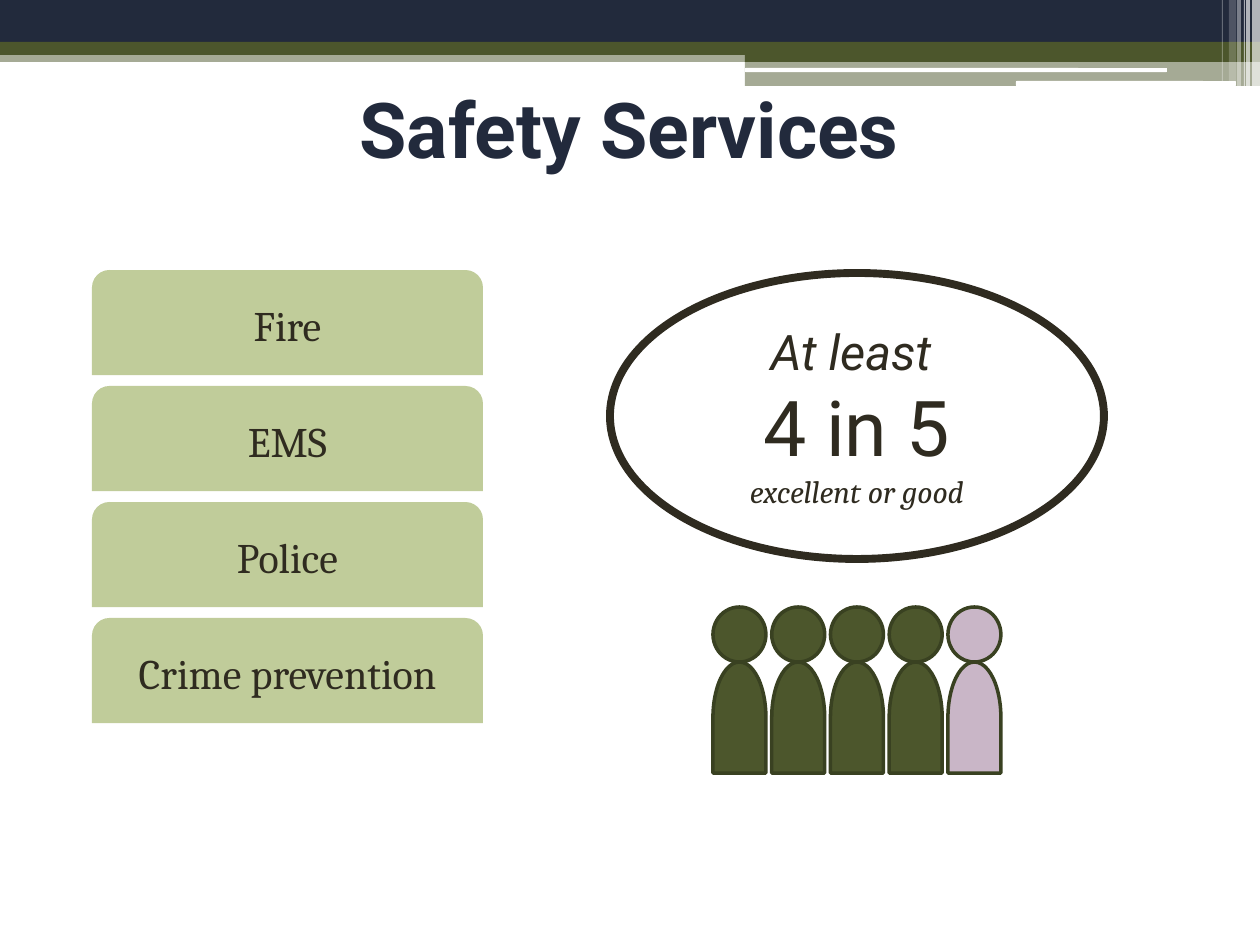
from lxml import etree
from pptx import Presentation
from pptx.dml.color import RGBColor
from pptx.enum.shapes import MSO_SHAPE
from pptx.enum.text import MSO_ANCHOR, PP_ALIGN
from pptx.oxml.ns import qn
from pptx.util import Pt

NAVY = RGBColor(0x22, 0x2A, 0x3C)
OLIVE = RGBColor(0x4C, 0x56, 0x2C)
OLIVE_EDGE = RGBColor(0x39, 0x41, 0x21)
SAGE = RGBColor(0xC0, 0xCC, 0x9A)
LILAC = RGBColor(0xC9, 0xB6, 0xC7)
INK = RGBColor(0x2F, 0x2B, 0x20)
WHITE = RGBColor(0xFF, 0xFF, 0xFF)


def px(length):
    return round(length * 914400 / 126)


def add_box(shapes, kind, left, top, width, height, fill=None, edge=None, edge_width=0, opacity=100):
    box = shapes.add_shape(kind, px(left), px(top), px(width), px(height))
    box.shadow.inherit = False
    if fill is None:
        box.fill.background()
    else:
        box.fill.solid()
        box.fill.fore_color.rgb = fill
    if opacity < 100:
        color = box.fill._xPr.find(qn("a:solidFill"))[0]
        etree.SubElement(color, qn("a:alpha")).set("val", str(opacity * 1000))
    if edge is None:
        box.line.fill.background()
    else:
        box.line.color.rgb = edge
        box.line.width = Pt(edge_width)
    return box


def write_line(para, text, size, font, color, bold=False, italic=False):
    para.alignment = PP_ALIGN.CENTER
    span = para.add_run()
    span.text = text
    span.font.size = Pt(size)
    span.font.name = font
    span.font.color.rgb = color
    span.font.bold = bold
    span.font.italic = italic


def draw_banner(page, left, top):
    rectangle, rounded = MSO_SHAPE.RECTANGLE, MSO_SHAPE.ROUNDED_RECTANGLE
    bands = [
        (rectangle, 0, 50, 1260, 12, OLIVE, 50),
        (rectangle, 0, 0, 1260, 43, NAVY, 100),
        (rectangle, 0, 42, 1260, 13, OLIVE, 100),
        (rectangle, 745, 49, 515, 13, OLIVE, 100),
        (rectangle, 745, 61, 515, 25, OLIVE, 50),
        (rounded, 745, 68, 422, 4, WHITE, 100),
        (rounded, 1016, 81, 220, 5, WHITE, 100),
    ]
    stripes = [(1252, 8, 86, 65), (1246, 4, 86, 65), (1244, 1, 86, 60),
               (1237, 4, 86, 40), (1229, 7, 81, 20), (1222, 1, 81, 30)]
    bands += [(rectangle, x, 0, width, height, WHITE, opacity) for x, width, height, opacity in stripes]
    for kind, x, y, width, height, fill, opacity in bands:
        add_box(page.shapes, kind, left + x, top + y, width, height, fill, opacity=opacity)


def draw_title(page, left, top, width, height):
    box = page.shapes.add_textbox(px(left), px(top), px(width), px(height))
    frame = box.text_frame
    frame.word_wrap = True
    frame.vertical_anchor = MSO_ANCHOR.MIDDLE
    write_line(frame.paragraphs[0], "Safety Services", 44, "Roboto", NAVY, bold=True)


def draw_services(page, left, top, width, height):
    services = ["Fire", "EMS", "Police", "Crime prevention"]
    gap = 11
    bar_height = (height - gap * (len(services) - 1)) / len(services)
    for index, service in enumerate(services):
        bar = add_box(page.shapes, MSO_SHAPE.ROUND_2_SAME_RECTANGLE,
                      left, top + index * (bar_height + gap), width, bar_height, SAGE)
        bar.text_frame.word_wrap = True
        bar.text_frame.vertical_anchor = MSO_ANCHOR.MIDDLE
        write_line(bar.text_frame.paragraphs[0], service, 24, "Cambria", INK)


def draw_rating(page, left, top, width, height):
    oval = add_box(page.shapes, MSO_SHAPE.OVAL, left, top, width, height, edge=INK, edge_width=4.5)
    frame = oval.text_frame
    frame.word_wrap = True
    frame.vertical_anchor = MSO_ANCHOR.TOP
    write_line(frame.paragraphs[0], "At least ", 28, "Roboto", INK, italic=True)
    write_line(frame.add_paragraph(), "4 in 5", 44, "Roboto", INK)
    write_line(frame.add_paragraph(), "excellent or good", 18, "Cambria", INK, italic=True)


def draw_people(page, left, top, width, height):
    colors = [OLIVE] * 4 + [LILAC]
    person_width, head_height = 53, 55
    body_height = height - head_height
    pitch = (width - person_width) / (len(colors) - 1)
    group = page.shapes.add_group_shape()
    for index, color in enumerate(colors):
        x = left + index * pitch
        add_box(group.shapes, MSO_SHAPE.OVAL, x, top, person_width, head_height, color, OLIVE_EDGE, 2)
        offset = (body_height - person_width) / 2
        body = add_box(group.shapes, MSO_SHAPE.FLOWCHART_DELAY, x - offset, top + head_height + offset,
                       body_height, person_width, color, OLIVE_EDGE, 2)
        body.rotation = 270


def main():
    deck = Presentation()
    deck.slide_width, deck.slide_height = px(1260), px(945)
    page = deck.slides.add_slide(deck.slide_layouts[6])
    draw_banner(page, 0, 0)
    draw_rating(page, 610, 273, 494, 286)
    draw_title(page, 10, 60, 1239, 136)
    draw_services(page, 92, 270, 391, 453)
    draw_people(page, 713, 607, 288, 166)
    deck.save("out.pptx")


if __name__ == "__main__":
    main()
